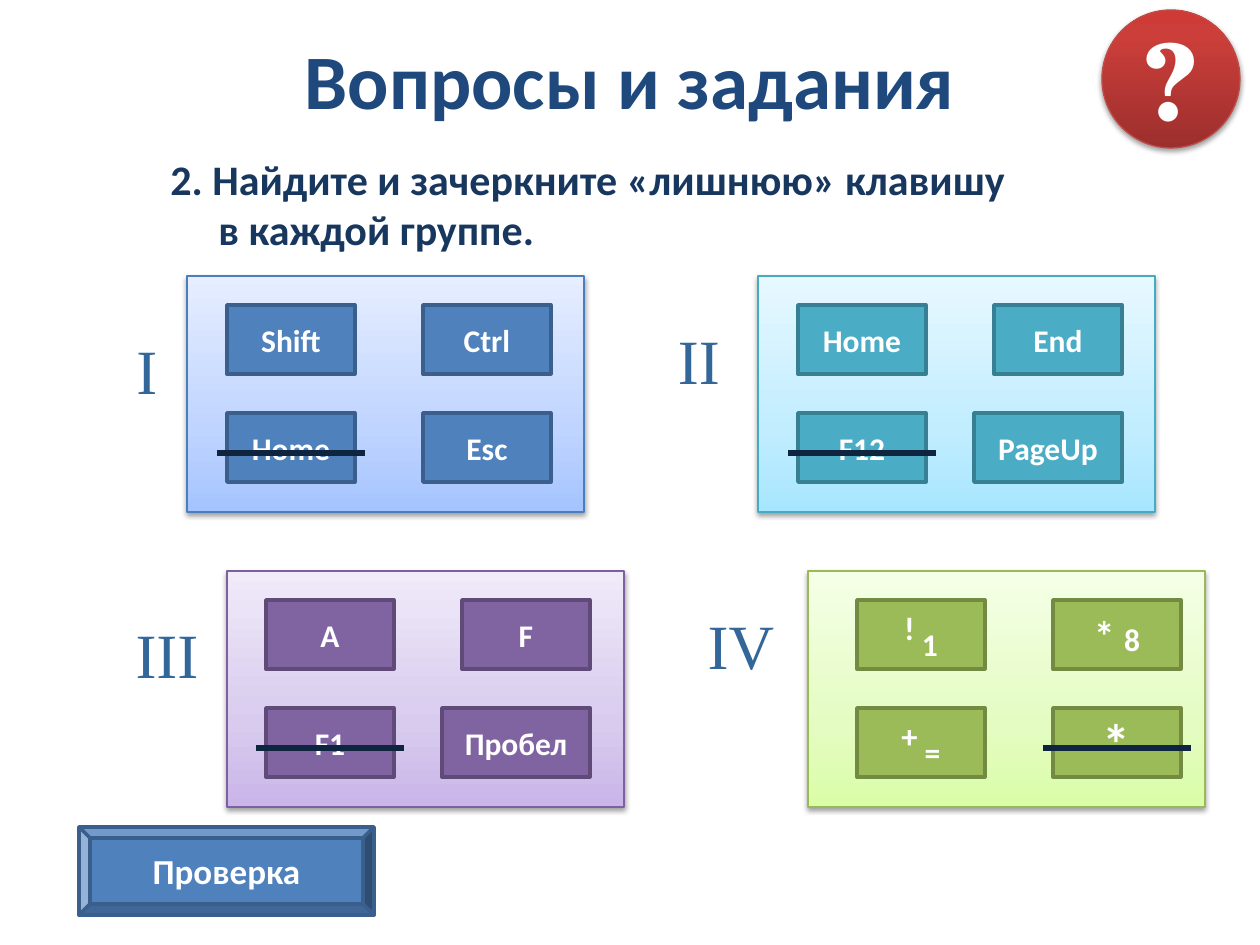
from copy import deepcopy
from dataclasses import dataclass

from pptx import Presentation
from pptx.dml.color import RGBColor
from pptx.enum.shapes import MSO_CONNECTOR, MSO_SHAPE as Preset
from pptx.enum.text import MSO_ANCHOR as Anchor, PP_ALIGN as Align
from pptx.oxml.ns import qn
from pptx.oxml.xmlchemy import OxmlElement
from pptx.util import Pt

PX = 914400 / 126  # EMU in one px


@dataclass(frozen=True)
class Theme:
    sans: str = "Calibri"
    numeral_font: str = "Times New Roman"
    badge_font: str = "TeX Gyre Schola"
    title: str = "1F497D"
    task: str = "17375E"
    numeral: str = "336699"
    white: str = "FFFFFF"
    strike: str = "0F243E"
    badge_line: str = "BF4C48"
    badge_stops: tuple = ((0, "9C2F2D"), (0.8, "CB3E3A"), (1, "CE3B37"))
    title_size: int = 44
    task_size: int = 24
    numeral_size: int = 36
    badge_size: int = 60
    button_size: int = 20
    key_size: int = 18


@dataclass(frozen=True)
class Palette:
    key: str
    key_line: str
    panel_line: str
    stops: tuple


THEME = Theme()
BLUE = Palette("4F81BD", "3A5F8C", "4B7EBC", ((0, "A4C4FF"), (0.35, "BFD4FF"), (1, "E6EEFF")))
TEAL = Palette("4BACC6", "377F92", "46AAC5", ((0, "A7E6FF"), (0.35, "C1EDFF"), (1, "E7F8FF")))
PURPLE = Palette("8064A2", "5F4A78", "7D60A0", ((0, "C9B5E8"), (0.35, "D8CBEE"), (1, "F0EAF9")))
GREEN = Palette("9BBB59", "738A42", "98B955", ((0, "DAFDA7"), (0.35, "E4FCC2"), (1, "F5FFE7")))

# Key size and grid steps inside a panel
KEY_W, WIDE_KEY_W, KEY_H = 128, 148, 69
STEP_X, STEP_Y, KEY_TOP = 196, 108, 29
STRIKE_OVERHANG, STRIKE_DROP = 10, 40

# Numeral box, panel box, left margin of keys, palette, keys by row, struck key.
# A key is a word or a list of (text, size, baseline) runs.
GROUPS = [
    ("I", (133, 331, 28, 72), (187, 276, 397, 236), 40, BLUE,
     ["Shift", "Ctrl", "Home", "Esc"], 2),
    ("II", (674, 321, 50, 72), (758, 276, 397, 236), 40, TEAL,
     ["Home", "End", "F12", "PageUp"], 2),
    ("III", (132, 615, 70, 72), (227, 571, 397, 236), 39, PURPLE,
     ["А", "F", "F1", "Пробел"], 2),
    ("IV", (703, 607, 76, 72), (808, 571, 397, 236), 49, GREEN,
     [[("!", 32, 30), (" 1", 18, 0)], [("* ", 24, 0), ("8", 18, 0)],
      [("+", 32, 30), (" =", 18, 0)], [("*", 32, 0)]], 3),
]
WIDE_KEYS = {"PageUp", "Пробел"}


def emu(box):
    return [round(length * PX) for length in box]


def style(font, name, size, color, bold=True):
    font.name, font.size, font.bold = name, Pt(size), bold
    font.color.rgb = RGBColor.from_string(color)


def add_preset(slide, preset, box, line_color, line_width, fill=None):
    shape = slide.shapes.add_shape(preset, *emu(box))
    shape.shadow.inherit = False
    shape.line.color.rgb = RGBColor.from_string(line_color)
    shape.line.width = Pt(line_width)
    if fill:
        shape.fill.solid()
        shape.fill.fore_color.rgb = RGBColor.from_string(fill)
    return shape


def add_glossy(slide, preset, box, line_color, stops):
    """Shape with a bottom-to-top gradient and a soft shadow."""
    shape = add_preset(slide, preset, box, line_color, 0.75)
    shape.fill.gradient()
    shape.fill.gradient_angle = 90
    stop_list = shape.element.spPr.find(qn("a:gradFill")).find(qn("a:gsLst"))
    stop_list.append(deepcopy(stop_list[0]))
    for stop, (position, color) in zip(shape.fill.gradient_stops, stops):
        stop.position = position
        stop.color.rgb = RGBColor.from_string(color)

    shadow = OxmlElement("a:outerShdw")
    for name, value in (("blurRad", Pt(3.1)), ("dist", Pt(1.6)), ("dir", 5400000),
                        ("algn", "ctr"), ("rotWithShape", 0)):
        shadow.set(name, str(value))
    shade, alpha = OxmlElement("a:srgbClr"), OxmlElement("a:alpha")
    shade.set("val", "000000")
    alpha.set("val", "38000")
    shade.append(alpha)
    shadow.append(shade)
    shape.element.spPr.find(qn("a:effectLst")).append(shadow)
    return shape


def caption(shape, text, name, size, color):
    frame = shape.text_frame
    frame.vertical_anchor = Anchor.MIDDLE
    paragraph = frame.paragraphs[0]
    paragraph.text, paragraph.alignment = text, Align.CENTER
    style(paragraph.font, name, size, color)
    return paragraph


def add_heading(slide, box):
    title = slide.shapes.title
    title.left, title.top, title.width, title.height = emu(box)
    caption(title, "Вопросы и задания", THEME.sans, THEME.title_size, THEME.title)


def add_badge(slide, box):
    badge = add_glossy(slide, Preset.OVAL, box, THEME.badge_line, THEME.badge_stops)
    caption(badge, "?", THEME.badge_font, THEME.badge_size, THEME.white)


def add_task(slide, box):
    frame = slide.shapes.add_textbox(*emu(box)).text_frame
    frame.word_wrap = True
    task = frame.paragraphs[0]
    task.text = "2. Найдите и зачеркните «лишнюю» клавишу\vв каждой группе."
    hanging = round(48 * PX)
    properties = task._p.get_or_add_pPr()
    properties.set("marL", str(hanging))
    properties.set("indent", str(-hanging))
    style(task.font, THEME.sans, THEME.task_size, THEME.task)


def add_numeral(slide, box, numeral):
    frame = slide.shapes.add_textbox(*emu(box)).text_frame
    frame.word_wrap = False
    frame.margin_left = frame.margin_right = frame.margin_top = frame.margin_bottom = 0
    paragraph = frame.paragraphs[0]
    paragraph.text, paragraph.alignment = numeral, Align.CENTER
    style(paragraph.font, THEME.numeral_font, THEME.numeral_size, THEME.numeral, False)


def add_key(slide, box, label, palette):
    key = add_preset(slide, Preset.RECTANGLE, box, palette.key_line, 2, palette.key)
    if isinstance(label, str):
        caption(key, label, THEME.sans, THEME.key_size, THEME.white)
        return
    paragraph = caption(key, "", THEME.sans, THEME.key_size, THEME.white)
    for text, size, baseline in label:
        symbol = paragraph.add_run()
        symbol.text = text
        style(symbol.font, THEME.sans, size, THEME.white)
        if baseline:
            symbol.font._element.set("baseline", str(baseline * 1000))


def add_strike(slide, left, top):
    ends = emu((left, top, left + WIDE_KEY_W, top))
    strike = slide.shapes.add_connector(MSO_CONNECTOR.STRAIGHT, *ends)
    strike.line.color.rgb = RGBColor.from_string(THEME.strike)
    strike.line.width = Pt(3)
    strike.element.spPr.append(OxmlElement("a:effectLst"))


def add_key_group(slide, box, margin, palette, labels, struck):
    add_glossy(slide, Preset.RECTANGLE, box, palette.panel_line, palette.stops)
    for index, label in enumerate(labels):
        row, column = divmod(index, 2)
        left = box[0] + margin + column * STEP_X
        top = box[1] + KEY_TOP + row * STEP_Y
        width = WIDE_KEY_W if str(label) in WIDE_KEYS else KEY_W
        # Wide keys keep the right edge of their column
        add_key(slide, (left + KEY_W - width, top, width, KEY_H), label, palette)
        if index == struck:
            add_strike(slide, left - STRIKE_OVERHANG, top + STRIKE_DROP)


def add_check_button(slide, box):
    button = add_preset(slide, Preset.BEVEL, box, BLUE.key_line, 2, BLUE.key)
    caption(button, "Проверка", THEME.sans, THEME.button_size, THEME.white)


def main():
    deck = Presentation()
    deck.slide_width, deck.slide_height = emu((1260, 945))
    slide = deck.slides.add_slide(deck.slide_layouts[5])
    add_heading(slide, (63, 0, 1134, 158))
    add_task(slide, (158, 147, 1040, 118))
    add_badge(slide, (1102, 10, 138, 138))
    add_check_button(slide, (79, 827, 295, 88))
    for numeral, numeral_box, *group in GROUPS:
        add_numeral(slide, numeral_box, numeral)
        add_key_group(slide, *group)
    deck.save("out.pptx")


if __name__ == "__main__":
    main()
